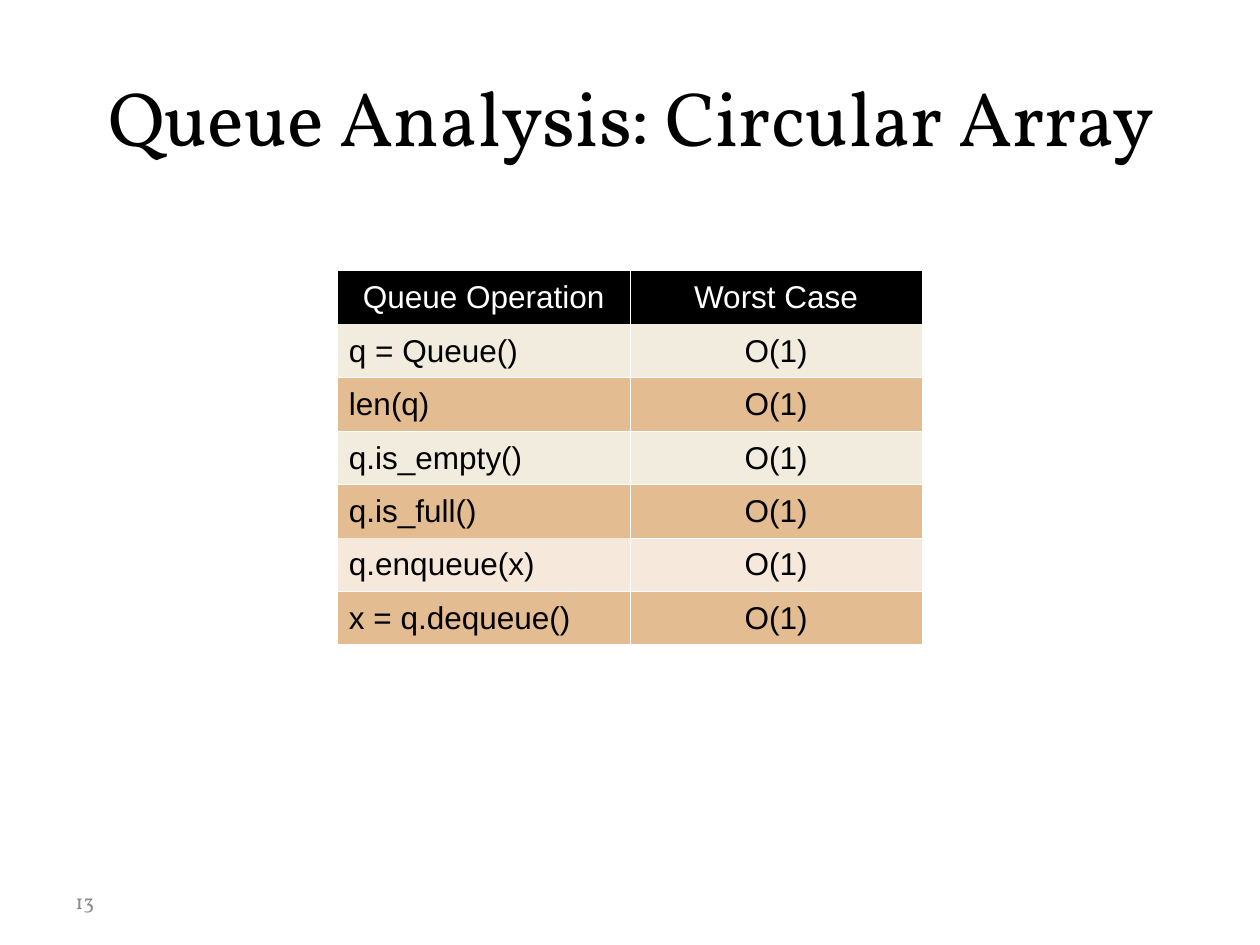
from pptx import Presentation
from pptx.dml.color import RGBColor
from pptx.enum.text import MSO_ANCHOR, PP_ALIGN
from pptx.oxml.ns import qn
from pptx.util import Inches, Pt
from lxml import etree

MIDDLE = MSO_ANCHOR.MIDDLE
LEFT, CENTER = PP_ALIGN.LEFT, PP_ALIGN.CENTER

THEME = {
    "serif": "Vollkorn", "sans": "Arial",
    "title_size": 44, "table_size": 18, "number_size": 12,
    "black": "000000", "white": "FFFFFF", "gray": "8C8C8C",
    "cream": "F2ECDE", "tan": "E3BC92", "blush": "F6E9DB",
    "rule_width": 0.57,
}
NO_STYLE = "{2D5ABB26-0587-4C30-8999-92F81FD0307C}"


def add_run(p, text, font, size, color):
    r = p.add_run()
    r.text = text
    r.font.name = THEME[font]
    r.font.size = Pt(THEME[size])
    r.font.color.rgb = RGBColor.from_string(THEME[color])


def add_borders(cell, sides):
    tcPr = cell._tc.get_or_add_tcPr()
    for side in sides:
        ln = etree.SubElement(tcPr, qn(f"a:ln{side}"), w=str(Pt(THEME["rule_width"])))
        fill = etree.SubElement(ln, qn("a:solidFill"))
        etree.SubElement(fill, qn("a:srgbClr"), val=THEME["white"])


prs = Presentation()
prs.slide_width, prs.slide_height = Inches(10), Inches(7.5)
s = prs.slides.add_slide(prs.slide_layouts[5])

# Title
sp = s.shapes.title
sp.left, sp.top, sp.width, sp.height = Inches(0.5), Inches(0.3), Inches(9.03), Inches(1.25)
tf = sp.text_frame
tf.vertical_anchor = MIDDLE
tf.margin_top = Inches(0.03)
p = tf.paragraphs[0]
p.alignment = CENTER
add_run(p, "Queue Analysis: Circular Array", "serif", "title_size", "black")

# Table of operations, centred across the slide
rows = [
    ("Queue Operation", "Worst Case", "black"),
    ("q = Queue()", "O(1)", "cream"),
    ("len(q)", "O(1)", "tan"),
    ("q.is_empty()", "O(1)", "cream"),
    ("q.is_full()", "O(1)", "tan"),
    ("q.enqueue(x)", "O(1)", "blush"),
    ("x = q.dequeue()", "O(1)", "tan"),
]
col_w, row_h = Inches(2.32), Inches(2.97) // len(rows)
table_w = 2 * col_w
sp = s.shapes.add_table(len(rows), 2, (prs.slide_width - table_w) // 2, Inches(2.15),
                        table_w, row_h * len(rows))
table = sp.table
table.first_row = table.horz_banding = False
table._tbl.tblPr.find(qn("a:tableStyleId")).text = NO_STYLE

# Rows with a white rule beneath, per column
ruled = [{1, 2, 5, 6}, {1, 2, 3, 4, 5, 6}]

for i, (operation, cost, fill) in enumerate(rows):
    for j, text in enumerate((operation, cost)):
        cell = table.cell(i, j)
        sides = ["R" if j == 0 else "L"]
        if i - 1 in ruled[j]:
            sides.append("T")
        if i in ruled[j]:
            sides.append("B")
        add_borders(cell, sides)
        cell.fill.solid()
        cell.fill.fore_color.rgb = RGBColor.from_string(THEME[fill])
        cell.vertical_anchor = MIDDLE
        cell.margin_left = cell.margin_right = Inches(0.09)
        cell.margin_top, cell.margin_bottom = Inches(0.08), Inches(0.06)
        p = cell.text_frame.paragraphs[0]
        p.alignment = LEFT if i and j == 0 else CENTER
        p.line_spacing = 0.93
        add_run(p, text, "sans", "table_size", "black" if i else "white")

# Slide number
sp = s.shapes.add_textbox(Inches(0.5), Inches(6.95), Inches(2.33), Inches(0.4))
tf = sp.text_frame
tf.word_wrap = True
tf.vertical_anchor = MIDDLE
add_run(tf.paragraphs[0], "13", "serif", "number_size", "gray")

prs.save("out.pptx")
